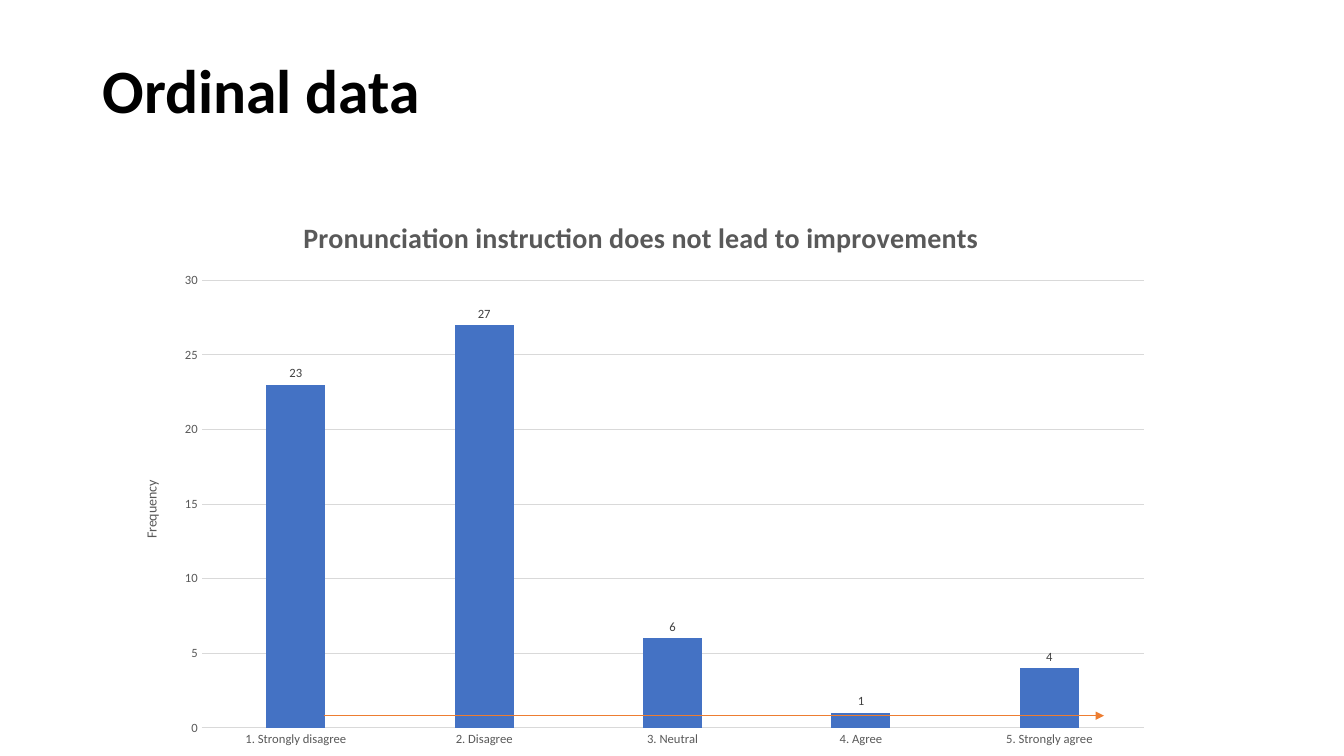
from dataclasses import dataclass

from lxml import etree
from pptx import Presentation
from pptx.chart.data import CategoryChartData
from pptx.dml.color import RGBColor
from pptx.enum.chart import XL_CHART_TYPE, XL_LABEL_POSITION, XL_TICK_MARK
from pptx.enum.shapes import MSO_CONNECTOR
from pptx.enum.text import MSO_ANCHOR
from pptx.oxml.ns import qn
from pptx.util import Inches, Pt

COLUMN = XL_CHART_TYPE.COLUMN_CLUSTERED
OUTSIDE_END = XL_LABEL_POSITION.OUTSIDE_END
NO_TICK = XL_TICK_MARK.NONE
STRAIGHT = MSO_CONNECTOR.STRAIGHT
MIDDLE = MSO_ANCHOR.MIDDLE

HEADING = "Ordinal data"
CHART_TITLE = "Pronunciation instruction does not lead to improvements"
AXIS_TITLE = "Frequency"
SERIES = "Series 1"
RESPONSES = {
    "1. Strongly disagree": 23,
    "2. Disagree": 27,
    "3. Neutral": 6,
    "4. Agree": 1,
    "5. Strongly agree": 4,
}

WIDTH, HEIGHT = 13.33, 7.5
HEADING_BOX = (0.92, 0.2, 11.5, 1.45)
CHART_BOX = (1.17, 1.95, 10.38, 5.55)
PLOT_SHARES = {"x": 0.08, "y": 0.15, "w": 0.9, "h": 0.8}
ARROW_START, ARROW_END, ARROW_LEVEL = 3.21, 10.95, 7.1


@dataclass(frozen=True)
class Theme:
    font: str = "Calibri"
    black: str = "000000"
    text: str = "595959"
    label: str = "404040"
    grid: str = "D9D9D9"
    bar: str = "4472C4"
    arrow: str = "ED7D31"
    heading_size: int = 44
    title_size: int = 20
    axis_title_size: int = 10
    small_size: int = 9
    grid_width: float = 0.75
    arrow_width: float = 0.5


THEME = Theme()


def style_font(font, size, color, bold=False):
    font.name = THEME.font
    font.size = Pt(size)
    font.bold = bold
    font.color.rgb = RGBColor.from_string(color)


def style_line(line, color, width):
    line.color.rgb = RGBColor.from_string(color)
    line.width = Pt(width)


def add_title(owner, text, size, bold=False):
    owner.has_title = True
    title = owner.chart_title if hasattr(owner, "chart_title") else owner.axis_title
    paragraph = title.text_frame.paragraphs[0]
    paragraph.text = text
    style_font(paragraph.font, size, THEME.text, bold)
    return title


def place_plot(chart):
    plot_area = chart.plots[0]._element.getparent()
    layout = plot_area.find(qn("c:layout"))
    if layout is None:
        layout = etree.Element(qn("c:layout"))
        plot_area.insert(0, layout)
    manual = etree.SubElement(layout, qn("c:manualLayout"))
    settings = {"layoutTarget": "inner", "xMode": "edge", "yMode": "edge", **PLOT_SHARES}
    for name, value in settings.items():
        etree.SubElement(manual, qn(f"c:{name}"), val=str(value))


def add_heading(slide):
    frame = slide.shapes.add_textbox(*map(Inches, HEADING_BOX)).text_frame
    frame.word_wrap = True
    frame.vertical_anchor = MIDDLE
    paragraph = frame.paragraphs[0]
    paragraph.text = HEADING
    paragraph.line_spacing = 0.9
    style_font(paragraph.font, THEME.heading_size, THEME.black, True)


def add_response_chart(slide):
    data = CategoryChartData(number_format="0")
    data.categories = list(RESPONSES)
    data.add_series(SERIES, list(RESPONSES.values()))
    chart = slide.shapes.add_chart(COLUMN, *map(Inches, CHART_BOX), data).chart
    style_font(chart.font, THEME.axis_title_size, THEME.black)
    chart.has_legend = False
    title = add_title(chart, CHART_TITLE, THEME.title_size, True)
    title.include_in_layout = False

    plot = chart.plots[0]
    plot.vary_by_categories = False
    plot.gap_width = 219
    plot.overlap = -27
    series = plot.series[0]
    series.format.fill.solid()
    series.format.fill.fore_color.rgb = RGBColor.from_string(THEME.bar)
    labels = series.data_labels
    labels.show_value = True
    labels.position = OUTSIDE_END
    style_font(labels.font, THEME.small_size, THEME.label)

    for axis in (chart.category_axis, chart.value_axis):
        axis.major_tick_mark = axis.minor_tick_mark = NO_TICK
        style_font(axis.tick_labels.font, THEME.small_size, THEME.text)
    style_line(chart.category_axis.format.line, THEME.grid, THEME.grid_width)
    value_axis = chart.value_axis
    value_axis.minimum_scale, value_axis.maximum_scale = 0, 30
    value_axis.major_unit = 5
    value_axis.format.line.fill.background()
    style_line(value_axis.major_gridlines.format.line, THEME.grid, THEME.grid_width)
    add_title(value_axis, AXIS_TITLE, THEME.axis_title_size)
    place_plot(chart)


def add_agreement_arrow(slide):
    points = (ARROW_START, ARROW_LEVEL, ARROW_END, ARROW_LEVEL)
    arrow = slide.shapes.add_connector(STRAIGHT, *map(Inches, points))
    style_line(arrow.line, THEME.arrow, THEME.arrow_width)
    etree.SubElement(arrow.line._get_or_add_ln(), qn("a:tailEnd"), type="triangle")
    etree.SubElement(arrow._element.spPr, qn("a:effectLst"))


def main():
    presentation = Presentation()
    presentation.slide_width = Inches(WIDTH)
    presentation.slide_height = Inches(HEIGHT)
    slide = presentation.slides.add_slide(presentation.slide_layouts[6])
    add_heading(slide)
    add_response_chart(slide)
    add_agreement_arrow(slide)
    presentation.save("out.pptx")


if __name__ == "__main__":
    main()
